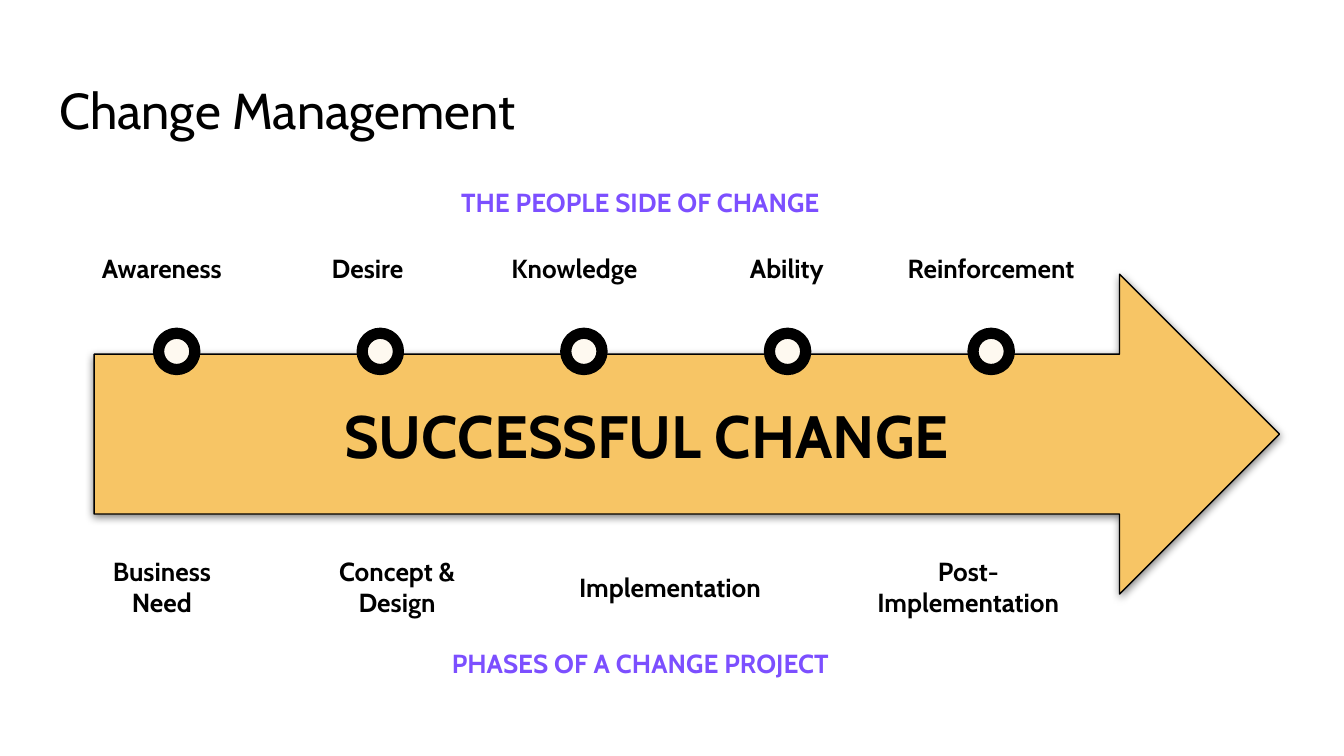
from typing import NamedTuple

from lxml.etree import SubElement
from pptx import Presentation
from pptx.dml.color import RGBColor
from pptx.enum.shapes import MSO_SHAPE as Preset
from pptx.enum.text import MSO_ANCHOR as Anchor, MSO_AUTO_SIZE as AutoSize, PP_ALIGN as Align
from pptx.oxml.ns import qn
from pptx.util import Inches, Pt

FONT = "Cabin"
BLACK, WHITE, GOLD, CREAM, PURPLE = "000000", "FFFFFF", "F7C565", "FEF9F0", "7C4FFF"
SLIDE_WIDTH = 10
SLIDE_HEIGHT = SLIDE_WIDTH * 9 / 16
MARKER_LEFT, MARKER_SPAN, MARKER_TOP, MARKER_SIZE = 1.18, 6.06, 2.48, 0.27


class Label(NamedTuple):
    """A centred caption with its box in inches."""

    text: str
    left: float
    top: float
    width: float
    height: float = 0.44
    color: str = BLACK


PEOPLE_TOP, PHASE_TOP = 1.78, 4.03
PEOPLE_STEPS = [
    Label("Awareness", 0.54, PEOPLE_TOP, 1.33),
    Label("Desire", 2.14, PEOPLE_TOP, 1.19),
    Label("Knowledge", 3.61, PEOPLE_TOP, 1.33),
    Label("Ability", 5.26, PEOPLE_TOP, 1.19),
    Label("Reinforcement", 6.43, PEOPLE_TOP, 1.89),
]
PROJECT_PHASES = [
    Label("Business Need", 0.54, PHASE_TOP, 1.33, 0.67),
    Label("Concept & Design", 2.36, PHASE_TOP, 1.19, 0.67),
    Label("Implementation", 4.04, 4.15, 1.89),
    Label("Post-\nImplementation", 6.26, PHASE_TOP, 1.89, 0.67),
]
HEADINGS = [
    Label("THE PEOPLE SIDE OF CHANGE", 2.97, 1.29, 3.59, color=PURPLE),
    Label("PHASES OF A CHANGE PROJECT", 2.97, 4.72, 3.59, color=PURPLE),
]


def rgb(value: str) -> RGBColor:
    """Turn a hex string into a colour."""
    return RGBColor.from_string(value)


def write(shape, text: str, *, size: float = 14, color: str = BLACK, bold: bool = True,
          align: Align = Align.CENTER, anchor: Anchor = Anchor.TOP,
          fit: AutoSize = AutoSize.NONE) -> None:
    """Fill a shape with formatted text, one paragraph per line."""
    frame = shape.text_frame
    frame.text = text
    frame.word_wrap = True
    frame.auto_size = fit
    frame.vertical_anchor = anchor
    frame.margin_left = frame.margin_right = Inches(0.1)
    frame.margin_top = frame.margin_bottom = Inches(0.1)
    for paragraph in frame.paragraphs:
        paragraph.alignment = align
        for run in paragraph.runs:
            run.font.name = FONT
            run.font.size = Pt(size)
            run.font.bold = bold
            run.font.color.rgb = rgb(color)


def add_label(slide, label: Label) -> None:
    """Draw a caption."""
    box = slide.shapes.add_textbox(*map(Inches, label[1:5]))
    write(box, label.text, color=label.color, fit=AutoSize.SHAPE_TO_FIT_TEXT)


def add_preset(slide, preset: Preset, left: float, top: float, width: float,
               height: float, fill: str, line_width: float):
    """Draw a filled preset shape with a black outline."""
    shape = slide.shapes.add_shape(preset, *map(Inches, (left, top, width, height)))
    shape.shadow.inherit = False
    shape.fill.solid()
    shape.fill.fore_color.rgb = rgb(fill)
    shape.line.color.rgb = rgb(BLACK)
    shape.line.width = Pt(line_width)
    return shape


def add_shadow(shape) -> None:
    """Give a shape a soft half-transparent shadow below it."""
    effects = shape._element.spPr.find(qn("a:effectLst"))
    shadow = SubElement(effects, qn("a:outerShdw"), blurRad=str(Pt(4.5)), dist=str(Pt(1.5)),
                        dir="5400000", algn="bl", rotWithShape="0")
    tint = SubElement(shadow, qn("a:srgbClr"), val=BLACK)
    SubElement(tint, qn("a:alpha"), val="50000")


def main() -> None:
    """Build and save the change management slide."""
    deck = Presentation()
    deck.slide_width, deck.slide_height = Inches(SLIDE_WIDTH), Inches(SLIDE_HEIGHT)
    slide = deck.slides.add_slide(deck.slide_layouts[5])
    slide.background.fill.solid()
    slide.background.fill.fore_color.rgb = rgb(WHITE)

    title = slide.shapes.title
    title.left, title.top, title.width, title.height = map(Inches, (0.34, 0.49, 9.32, 0.63))
    write(title, "Change Management", size=27, bold=False, align=Align.LEFT)

    arrow = add_preset(slide, Preset.RIGHT_ARROW, 0.7, 2.04, 8.82, 2.38, GOLD, 0.75)
    add_shadow(arrow)
    write(arrow, "SUCCESSFUL CHANGE", size=32, anchor=Anchor.MIDDLE)

    marker_step = MARKER_SPAN / (len(PEOPLE_STEPS) - 1)
    for index in range(len(PEOPLE_STEPS)):
        add_preset(slide, Preset.OVAL, MARKER_LEFT + index * marker_step, MARKER_TOP,
                   MARKER_SIZE, MARKER_SIZE, CREAM, 6)
    for label in PEOPLE_STEPS + PROJECT_PHASES + HEADINGS:
        add_label(slide, label)

    deck.save("out.pptx")


if __name__ == "__main__":
    main()
